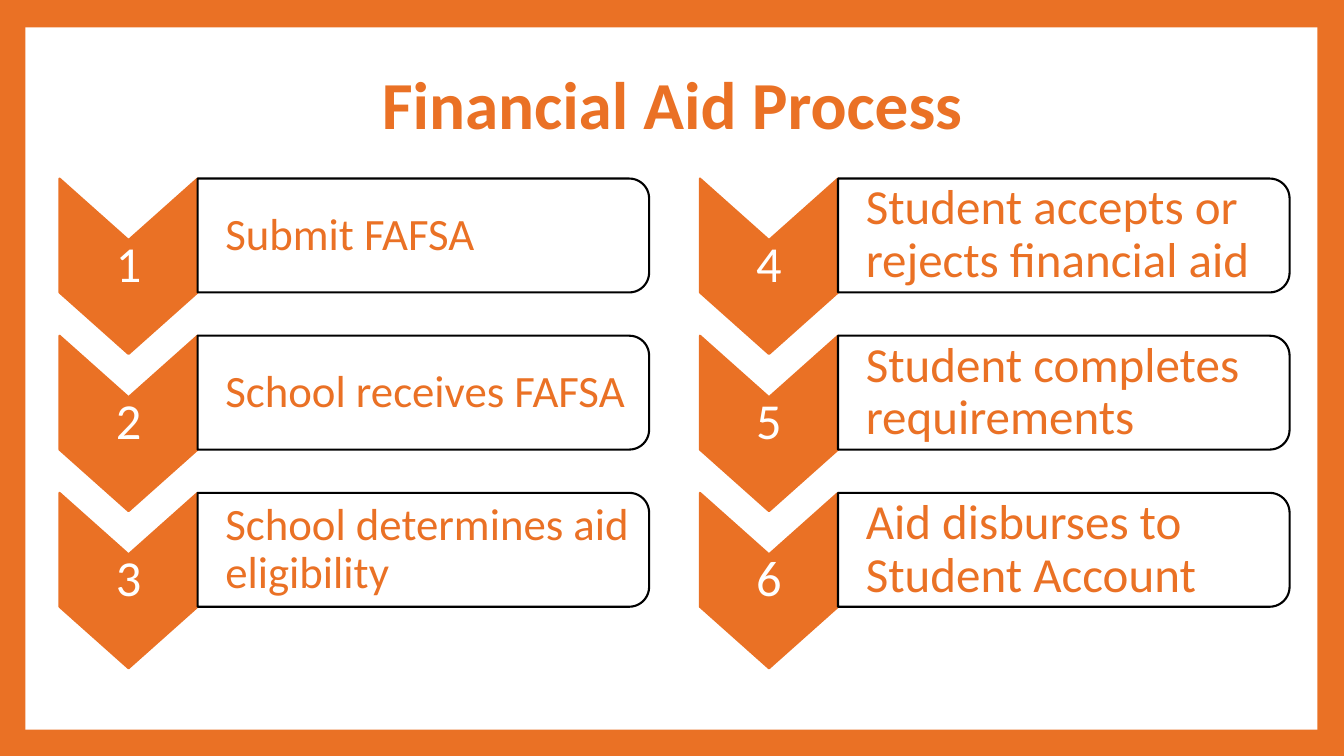
import math
from pptx import Presentation
from pptx import util as u
from pptx.dml.color import RGBColor
from pptx.enum import shapes, text

ORANGE, WHITE, BLACK = "EA7125", "FFFFFF", "000000"
FONT = "Calibri"
LEFT = ["Submit FAFSA", "School receives FAFSA", "School determines aid eligibility"]
RIGHT = ["Student accepts or rejects financial aid", "Student completes requirements",
         "Aid disburses to Student Account"]

# Sizes of one step, in cm
ARROW, BAR, NOTCH, PITCH, ROUND = 3.48, 2.87, 1.55, 3.96, 0.5


def paint(fill, color):
    fill.solid()
    fill.fore_color.rgb = RGBColor.from_string(color)


def write(shape, words, size=36, color=ORANGE, bold=False, center=True, pad=(0.08, 0.08)):
    frame = shape.text_frame
    frame.word_wrap = True
    frame.vertical_anchor = text.MSO_ANCHOR.MIDDLE
    frame.margin_left, frame.margin_right = map(u.Cm, pad)
    frame.margin_top = frame.margin_bottom = u.Cm(0.23)
    para = frame.paragraphs[0]
    para.alignment = text.PP_ALIGN.CENTER if center else text.PP_ALIGN.LEFT
    para.line_spacing = 0.9
    run = para.add_run()
    run.text = words
    run.font.name, run.font.size, run.font.bold = FONT, u.Pt(size), bold
    run.font.color.rgb = RGBColor.from_string(color)


def outline(slide, points, fill, line):
    spots = [(u.Cm(x), u.Cm(y)) for x, y in points]
    pen = slide.shapes.build_freeform(*spots[0], scale=1.0)
    pen.add_line_segments(spots[1:], close=True)
    shape = pen.convert_to_shape()
    shape.shadow.inherit = False
    paint(shape.fill, fill)
    paint(shape.line.fill, line)
    shape.line.width = u.Pt(1.5)
    return shape


def arc(x, y, start):
    """Points of a quarter circle around (x, y), from start degrees on."""
    turns = [math.radians(start + 9 * i) for i in range(11)]
    return [(x + ROUND * math.cos(t), y + ROUND * math.sin(t)) for t in turns]


def step(slide, x, y, width, number, words, size):
    # Numbered arrow
    mid, edge, low = x + ARROW / 2, x + ARROW, y + BAR
    arrow = outline(slide, [(x, y), (mid, y + NOTCH), (edge, y), (edge, low),
                            (mid, low + NOTCH), (x, low)], ORANGE, ORANGE)
    write(arrow, str(number), color=WHITE)
    # Bar with rounded right corners
    end = x + width - ROUND
    bar = outline(slide, [(edge, y), *arc(end, y + ROUND, -90),
                          *arc(end, low - ROUND, 0), (edge, low)], WHITE, BLACK)
    write(bar, words, size=size, center=False, pad=(0.7, 0.23))


def column(slide, x, y, width, first, items, size):
    for i, words in enumerate(items):
        step(slide, x, y + i * PITCH, width, first + i, words, size)


def frame(slide, x, y, width, height):
    paint(slide.background.fill, ORANGE)
    page = slide.shapes.add_shape(shapes.MSO_SHAPE.RECTANGLE,
                                  *map(u.Cm, (x, y, width, height)))
    page.shadow.inherit = False
    paint(page.fill, WHITE)
    page.line.fill.background()


def title(slide, x, y, width, height, words):
    box = slide.shapes.add_textbox(*map(u.Cm, (x, y, width, height)))
    write(box, words, size=48, bold=True, pad=(0.25, 0.25))


def main():
    deck = Presentation()
    deck.slide_width, deck.slide_height = u.Cm(33.87), u.Cm(19.05)
    slide = deck.slides.add_slide(deck.slide_layouts[6])
    frame(slide, 0.64, 0.69, 32.56, 17.7)
    column(slide, 1.5, 4.5, 14.86, 1, LEFT, 32)
    column(slide, 17.64, 4.5, 14.86, 4, RIGHT, 35)
    title(slide, 3.23, 1.45, 27.43, 2.51, "Financial Aid Process")
    deck.save("out.pptx")


if __name__ == "__main__":
    main()
